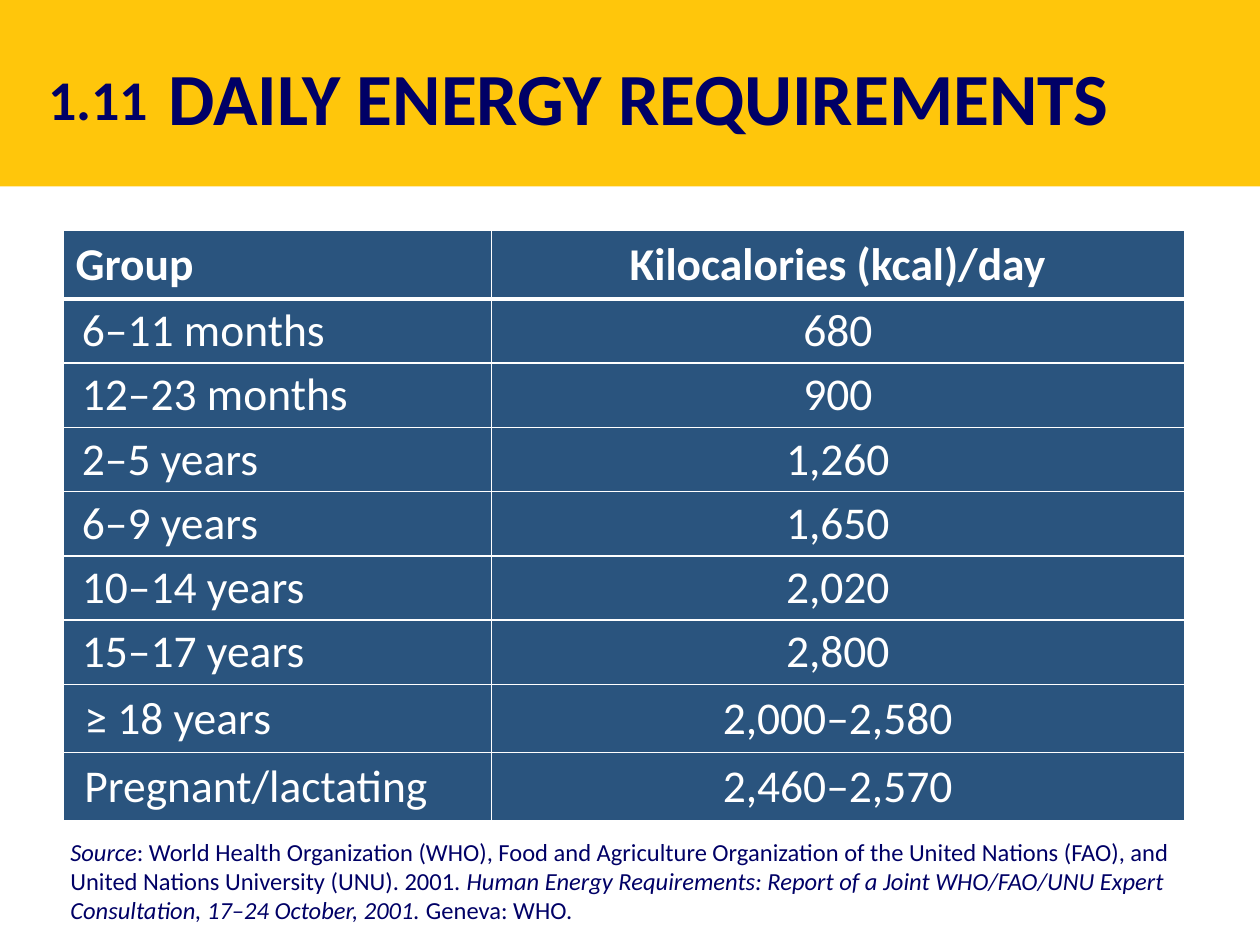
"""Build the daily energy requirements slide."""
from dataclasses import dataclass

from lxml.etree import SubElement
from pptx import Presentation
from pptx.dml.color import RGBColor
from pptx.enum.shapes import MSO_SHAPE
from pptx.enum.text import MSO_ANCHOR, PP_ALIGN
from pptx.oxml.ns import qn
from pptx.util import Inches, Pt

GOLD = RGBColor(0xFF, 0xC6, 0x0B)
NAVY = RGBColor(0x00, 0x00, 0x66)
BLUE = RGBColor(0x2A, 0x54, 0x7E)
WHITE = RGBColor(0xFF, 0xFF, 0xFF)
FONT = "Calibri"
THIN, THICK = 1, 3


@dataclass(frozen=True)
class EnergyRow:
    group: str
    kilocalories: str
    height: float = 0.51
    side_margin: float = 0.08
    end_margin: float = 0
    indent: float = 0.07
    bold: bool = False
    top_border: int = THIN
    bottom_border: int = THIN


ROWS = [
    EnergyRow("Group", "Kilocalories (kcal)/day", 0.54, 0.1, 0.05,
              indent=0, bold=True, bottom_border=THICK),
    EnergyRow("6–11 months", "680", top_border=THICK),
    EnergyRow("12–23 months", "900"),
    EnergyRow("2–5 years", "1,260"),
    EnergyRow("6–9 years", "1,650"),
    EnergyRow("10–14 years", "2,020"),
    EnergyRow("15–17 years", "2,800"),
    EnergyRow("≥ 18 years", "2,000–2,580", 0.54, 0.1, 0.05),
    EnergyRow("Pregnant/lactating", "2,460–2,570", 0.54, 0.1, 0.05),
]
COLUMN_WIDTHS = (3.4, 5.5)
SOURCE_RUNS = [
    ("Source", True),
    (": World Health Organization (WHO), Food and Agriculture Organization of the "
     "United Nations (FAO), and United Nations University (UNU). 2001. ", False),
    ("Human Energy Requirements: Report of a Joint WHO/FAO/UNU Expert Consultation, "
     "17–24 October, 2001. ", True),
    ("Geneva: WHO.", False),
]


def place(shape, left: float, top: float, width: float, height: float) -> None:
    shape.left, shape.top = Inches(left), Inches(top)
    shape.width, shape.height = Inches(width), Inches(height)


def format_paragraph(paragraph, size: int, color: RGBColor, bold: bool = False,
                     alignment=PP_ALIGN.LEFT) -> None:
    paragraph.alignment = alignment
    font = paragraph.font
    font.name, font.size, font.bold = FONT, Pt(size), bold
    font.color.rgb = color


def add_banner(slide) -> None:
    banner = slide.shapes.add_shape(
        MSO_SHAPE.RECTANGLE, 0, 0, Inches(10), Inches(1.48))
    banner.shadow.inherit = False
    banner.fill.solid()
    banner.fill.fore_color.rgb = GOLD
    banner.line.fill.background()
    banner.element.getparent().insert(2, banner.element)


def add_title(slide) -> None:
    title = slide.shapes.title
    place(title, 1.24, 0.36, 8.76, 0.6)
    frame = title.text_frame
    frame.text = "DAILY ENERGY REQUIREMENTS"
    frame.vertical_anchor = MSO_ANCHOR.TOP
    format_paragraph(frame.paragraphs[0], 42, NAVY, bold=True)


def add_section_number(slide) -> None:
    box = slide.shapes.add_textbox(
        Inches(0.28), Inches(0.46), Inches(1), Inches(0.64))
    box.text_frame.word_wrap = False
    box.text_frame.text = "1.11"
    format_paragraph(box.text_frame.paragraphs[0], 32, NAVY, True, PP_ALIGN.CENTER)


def set_borders(cell, row: EnergyRow) -> None:
    properties = cell._tc.get_or_add_tcPr()
    widths = {"a:lnL": THIN, "a:lnR": THIN,
              "a:lnT": row.top_border, "a:lnB": row.bottom_border}
    for tag, width in widths.items():
        line = SubElement(properties, qn(tag), w=str(Pt(width)))
        fill = SubElement(line, qn("a:solidFill"))
        SubElement(fill, qn("a:srgbClr"), val=str(WHITE))


def fill_cell(cell, text: str, row: EnergyRow, alignment) -> None:
    set_borders(cell, row)
    cell.fill.solid()
    cell.fill.fore_color.rgb = BLUE
    cell.vertical_anchor = MSO_ANCHOR.MIDDLE
    cell.margin_left = cell.margin_right = Inches(row.side_margin)
    cell.margin_top = cell.margin_bottom = Inches(row.end_margin)
    cell.text = text
    format_paragraph(cell.text_frame.paragraphs[0], 26, WHITE, row.bold, alignment)


def add_energy_table(slide) -> None:
    table = slide.shapes.add_table(
        len(ROWS), len(COLUMN_WIDTHS), Inches(0.5), Inches(1.83),
        Inches(sum(COLUMN_WIDTHS)), Inches(sum(row.height for row in ROWS))).table
    for column, width in zip(table.columns, COLUMN_WIDTHS):
        column.width = Inches(width)
    for index, row in enumerate(ROWS):
        table.rows[index].height = Inches(row.height)
        group_cell, value_cell = table.rows[index].cells
        fill_cell(group_cell, row.group, row, PP_ALIGN.LEFT)
        fill_cell(value_cell, row.kilocalories, row, PP_ALIGN.CENTER)
        paragraph_properties = group_cell.text_frame.paragraphs[0]._p.get_or_add_pPr()
        paragraph_properties.set("marL", str(Inches(row.indent)))


def add_source(slide) -> None:
    box = slide.shapes.add_textbox(
        Inches(0.46), Inches(6.59), Inches(9.1), Inches(0.81))
    box.text_frame.word_wrap = True
    paragraph = box.text_frame.paragraphs[0]
    format_paragraph(paragraph, 14, NAVY)
    for text, italic in SOURCE_RUNS:
        run = paragraph.add_run()
        run.text = text
        run.font.italic = italic


def main() -> None:
    presentation = Presentation()
    presentation.slide_width, presentation.slide_height = Inches(10), Inches(7.5)
    slide = presentation.slides.add_slide(
        presentation.slide_layouts.get_by_name("Title Only"))
    add_banner(slide)
    add_energy_table(slide)
    add_source(slide)
    add_title(slide)
    add_section_number(slide)
    presentation.save("out.pptx")


if __name__ == "__main__":
    main()
